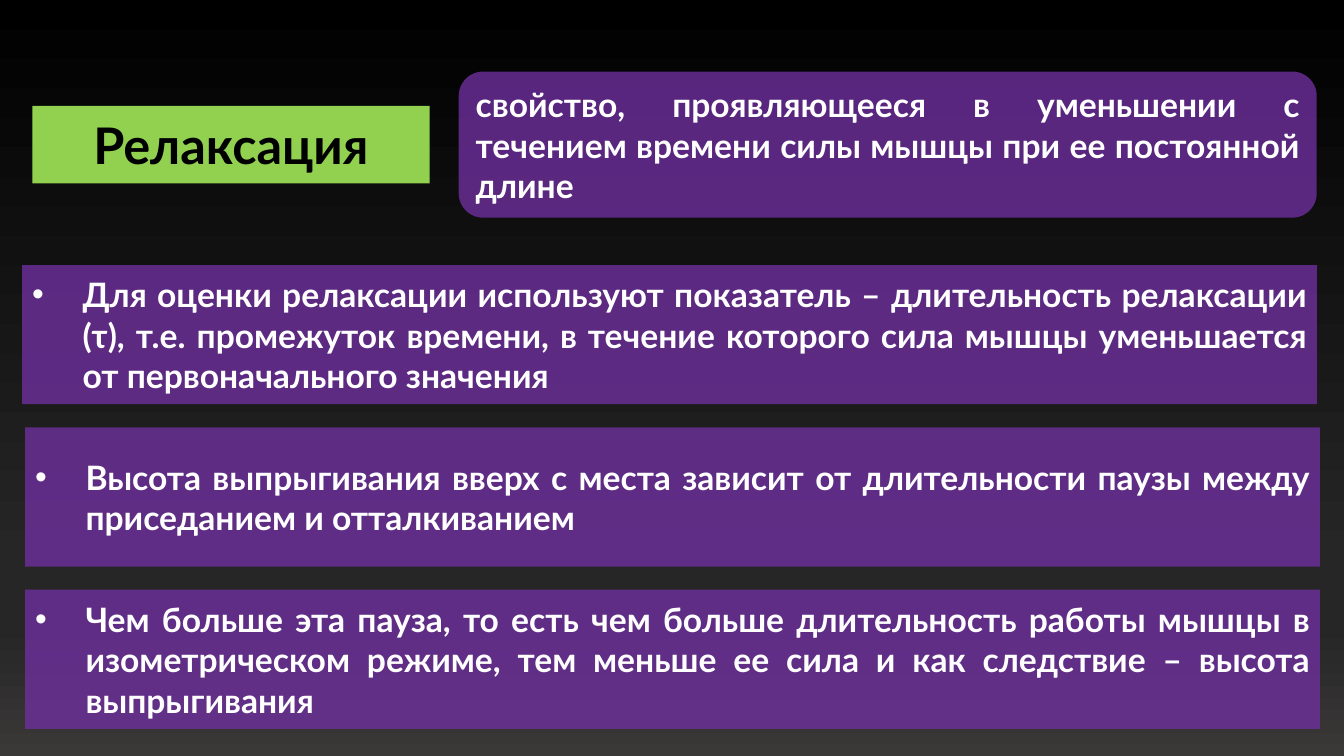
from lxml import etree
from pptx import Presentation
from pptx.dml.color import RGBColor
from pptx.enum.shapes import MSO_SHAPE
from pptx.enum.text import MSO_ANCHOR, MSO_AUTO_SIZE, PP_ALIGN
from pptx.oxml.ns import qn
from pptx.util import Inches, Pt

PROCESS = MSO_SHAPE.FLOWCHART_PROCESS
ROUNDED = MSO_SHAPE.FLOWCHART_ALTERNATE_PROCESS
MIDDLE, NO_FIT = MSO_ANCHOR.MIDDLE, MSO_AUTO_SIZE.NONE
CENTER, JUSTIFY = PP_ALIGN.CENTER, PP_ALIGN.JUSTIFY
TITLE_ONLY = 5

COLORS = {"green": "92D050", "purple": "7030A0", "black": "000000",
          "white": "FFFFFF", "dark": "262626", "grey": "3B3838"}
BACKGROUND_STOPS = [(0, "black"), (74, "dark"), (83, "dark"), (100, "grey")]
PURPLE_OPACITY = 78

TITLE_FONT = {"name": "Lato", "size": Pt(36), "bold": True}
TEXT_FONT = {"name": "Lato", "size": Pt(24), "bold": True}

TITLE = "Релаксация"
DEFINITION = ("свойство, проявляющееся в уменьшении с течением времени "
              "силы мышцы при ее постоянной длине")
POINTS = [
    "Для оценки релаксации используют показатель – длительность релаксации (τ), "
    "т.е. промежуток времени, в течение которого сила мышцы уменьшается "
    "от первоначального значения",
    "Высота выпрыгивания вверх с места зависит от длительности паузы "
    "между приседанием и отталкиванием",
    "Чем больше эта пауза, то есть чем больше длительность работы мышцы "
    "в изометрическом режиме, тем меньше ее сила и как следствие – "
    "высота выпрыгивания",
]


def part_of(box, left, top, width, height):
    """Return the part of a box given in percent of its size."""
    x, y, w, h = box
    return (int(x + w * left / 100), int(y + h * top / 100),
            int(w * width / 100), int(h * height / 100))


def write(shape, text, font_values, color, alignment):
    frame = shape.text_frame
    for name, value in {"word_wrap": True, "auto_size": NO_FIT,
                        "vertical_anchor": MIDDLE}.items():
        setattr(frame, name, value)
    para = frame.paragraphs[0]
    para.alignment = alignment
    span = para.add_run()
    span.text = text
    for name, value in font_values.items():
        setattr(span.font, name, value)
    span.font.color.rgb = RGBColor.from_string(COLORS[color])
    return para


def paint(shape, color):
    shape.fill.solid()
    shape.fill.fore_color.rgb = RGBColor.from_string(COLORS[color])


def add_purple_box(page, kind, box, text):
    shape = page.shapes.add_shape(kind, *box)
    shape.shadow.inherit = False
    paint(shape, "purple")
    color = shape.element.spPr.find(".//" + qn("a:srgbClr"))
    etree.SubElement(color, qn("a:alpha"), val=str(PURPLE_OPACITY * 1000))
    shape.line.fill.background()
    return write(shape, text, TEXT_FONT, "white", JUSTIFY)


def add_bullet(para):
    properties = para._p.get_or_add_pPr()
    properties.set("marL", str(Inches(0.5)))
    properties.set("indent", str(Inches(-0.5)))
    etree.SubElement(properties, qn("a:buFont"), typeface="Arial")
    etree.SubElement(properties, qn("a:buChar"), char="•")


def set_background(page):
    fill = page.background.fill
    fill.gradient()
    fill.gradient_angle = 270
    stops = page.element.find(".//" + qn("a:gsLst"))
    for stop in list(stops):
        stops.remove(stop)
    for position, color in BACKGROUND_STOPS:
        stop = etree.SubElement(stops, qn("a:gs"), pos=str(position * 1000))
        etree.SubElement(stop, qn("a:srgbClr"), val=COLORS[color])


def add_header(page, box):
    # Term on the left
    title = page.shapes.title
    title.left, title.top, title.width, title.height = part_of(
        box, 0, 23.45, 30.93, 53.1)
    paint(title, "green")
    write(title, TITLE, TITLE_FONT, "black", CENTER)
    # Definition on the right
    add_purple_box(page, ROUNDED, part_of(box, 33.2, 0, 66.8, 100), DEFINITION)


def add_points(page, box):
    row_height, row_pitch = 30, 35
    for row, text in enumerate(POINTS):
        left = 0.23 if row else 0  # the first row stands slightly further left
        row_box = part_of(box, left, row * row_pitch, 99.77, row_height)
        add_bullet(add_purple_box(page, PROCESS, row_box, text))


def main():
    deck = Presentation()
    deck.slide_width, deck.slide_height = Inches(13.33), Inches(7.5)
    page = deck.slides.add_slide(deck.slide_layouts[TITLE_ONLY])
    whole = (0, 0, deck.slide_width, deck.slide_height)
    set_background(page)
    add_header(page, part_of(whole, 2.4, 9.47, 95.57, 19.33))
    add_points(page, part_of(whole, 1.65, 35.07, 96.55, 61.33))
    deck.save("out.pptx")


if __name__ == "__main__":
    main()
